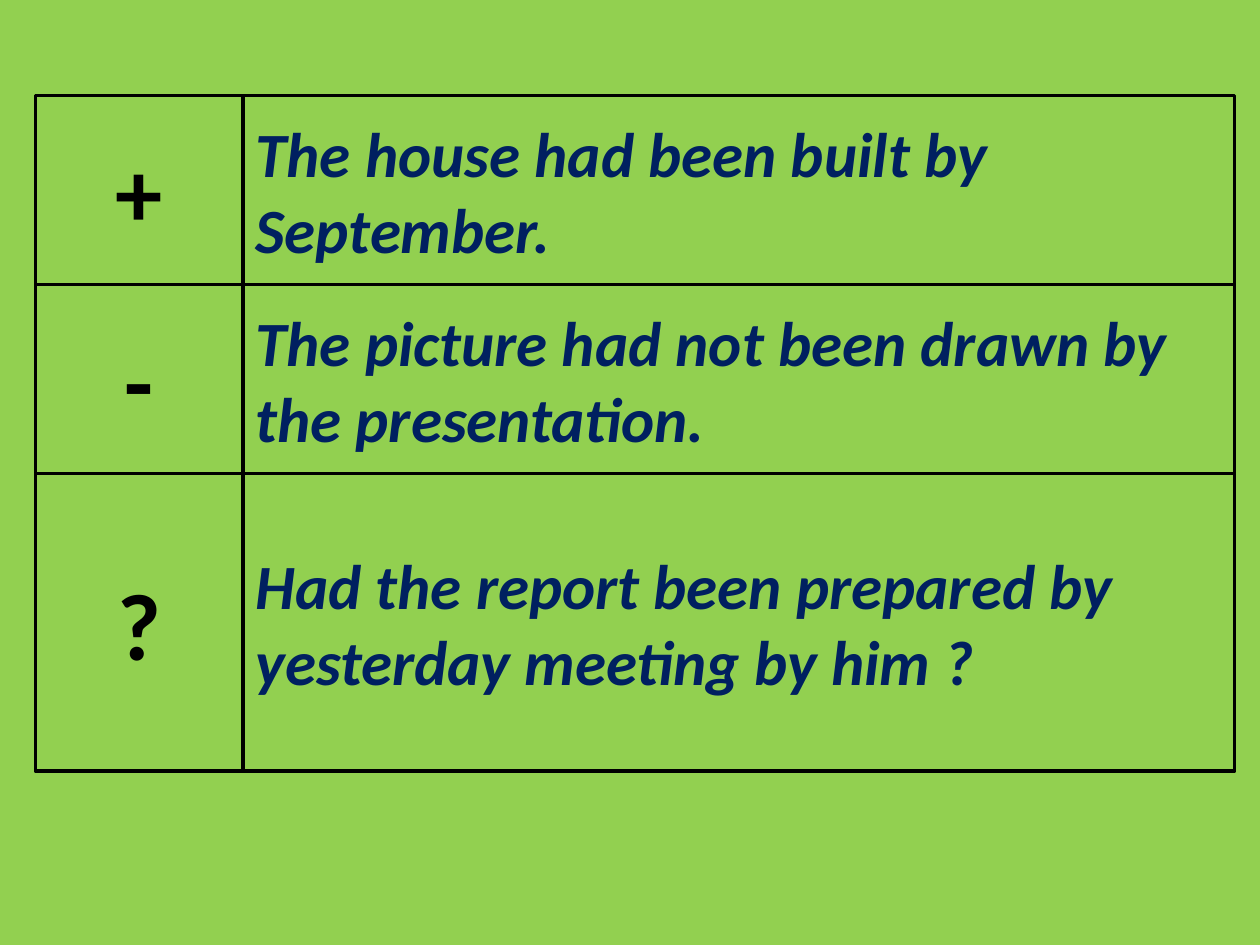
from dataclasses import dataclass

from pptx import Presentation
from pptx.dml.color import RGBColor
from pptx.enum.shapes import MSO_SHAPE as Shape
from pptx.enum.text import MSO_ANCHOR as Anchor, PP_ALIGN as Align
from pptx.slide import Slide
from pptx.util import Inches, Pt

COLORS = {"background": "92D050", "border": "000000", "sign": "000000", "sentence": "002060"}
FONT = "Calibri"
TOP = 0.76


@dataclass(frozen=True)
class Column:
    """Place and text style of one column."""

    left: float
    width: float
    size: int
    color: str
    align: Align
    italic: bool


@dataclass(frozen=True)
class Example:
    """One sentence form with its sign and row height."""

    sign: str
    sentence: str
    height: float


SIGNS = Column(0.28, 1.65, 54, "sign", Align.CENTER, False)
SENTENCES = Column(1.93, 7.87, 36, "sentence", Align.LEFT, True)
EXAMPLES = [
    Example("+", "The house had been built by September.", 1.5),
    Example("-", "The picture had not been drawn by the presentation.", 1.5),
    Example("?", "Had the report been prepared by yesterday meeting by him ?", 2.36),
]


def color(name: str) -> RGBColor:
    """Look up a named colour."""
    return RGBColor.from_string(COLORS[name])


def draw_cell(slide: Slide, column: Column, top: float, height: float, text: str) -> None:
    """Draw one outlined box with its text."""
    box = slide.shapes.add_shape(
        Shape.RECTANGLE, Inches(column.left), Inches(top), Inches(column.width), Inches(height)
    )
    box.shadow.inherit = False
    box.fill.background()
    box.line.color.rgb = color("border")
    box.line.width = Pt(2)
    frame = box.text_frame
    frame.word_wrap = True
    frame.vertical_anchor = Anchor.MIDDLE
    para = frame.paragraphs[0]
    para.alignment = column.align
    span = para.add_run()
    span.text = text
    span.font.name = FONT
    span.font.size = Pt(column.size)
    span.font.bold = True
    span.font.italic = column.italic
    span.font.color.rgb = color(column.color)


def main() -> None:
    """Build and save the slide."""
    deck = Presentation()
    deck.slide_width, deck.slide_height = Inches(10), Inches(7.5)
    page = deck.slides.add_slide(deck.slide_layouts[6])
    page.background.fill.solid()
    page.background.fill.fore_color.rgb = color("background")
    top = TOP
    for example in EXAMPLES:
        draw_cell(page, SIGNS, top, example.height, example.sign)
        draw_cell(page, SENTENCES, top, example.height, example.sentence)
        top += example.height
    deck.save("out.pptx")


if __name__ == "__main__":
    main()
